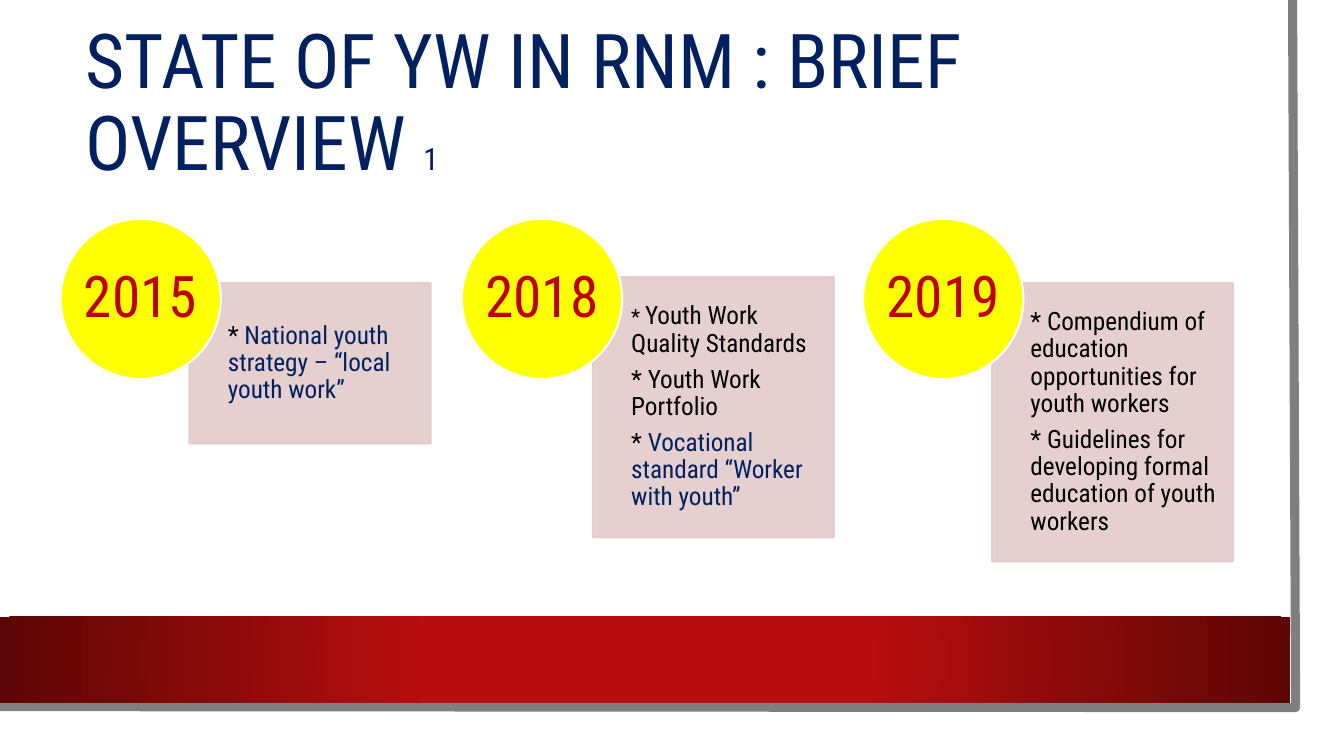
from dataclasses import dataclass

from lxml import etree
from pptx import Presentation
from pptx.dml.color import RGBColor
from pptx.enum.shapes import MSO_SHAPE
from pptx.enum.text import MSO_ANCHOR, PP_ALIGN
from pptx.oxml.ns import qn
from pptx.util import Inches, Pt

RECTANGLE = MSO_SHAPE.RECTANGLE
OVAL = MSO_SHAPE.OVAL
MIDDLE = MSO_ANCHOR.MIDDLE
LEFT = PP_ALIGN.LEFT
CENTER = PP_ALIGN.CENTER


@dataclass(frozen=True)
class Theme:
    font: str = "Roboto Condensed"
    navy: str = "002060"
    black: str = "000000"
    year: str = "C00000"
    circle: str = "FFFF00"
    white: str = "FFFFFF"
    card: str = "E4CACA"
    frame: str = "7F7F7F"
    band: str = "B80E0F"
    band_edge: str = "5C0607"
    title_size: float = 54
    title_number_size: float = 22
    year_size: float = 41
    body_size: float = 18
    star_size: float = 15


THEME = Theme()

CIRCLE_LEFT, CIRCLE_TOP, CIRCLE_SIZE, CIRCLE_STEP = 0.6, 2.17, 1.59, 3.98
CARD_WIDTH = 2.39
CARD_INDENT = 0.38

STAR = ("* ", THEME.black, THEME.body_size)


def body(text, color=THEME.black):
    return text, color, THEME.body_size


# year, card left, card top, card height, card padding, paragraphs of runs
MILESTONES = [
    ("2015", 1.88, 2.81, 1.59, 0.14, [
        [STAR, body("National youth strategy – “local youth work”", THEME.navy)],
    ]),
    ("2018", 5.88, 2.75, 2.58, 0.12, [
        [("* ", THEME.black, THEME.star_size), body("Youth Work Quality Standards")],
        [body("* Youth Work Portfolio")],
        [STAR, body("Vocational standard “Worker with youth”", THEME.navy)],
    ]),
    ("2019", 9.84, 2.81, 2.76, 0.14, [
        [body("* Compendium of education opportunities for youth workers")],
        [body("* Guidelines for developing formal education of youth workers")],
    ]),
]


def write_text(shape, paragraphs, margins=(0, 0, 0, 0), align=LEFT, wrap=True,
               space_before=0):
    """Fill a shape with paragraphs, each a list of (text, colour, size) runs."""
    frame = shape.text_frame
    frame.word_wrap = wrap
    frame.vertical_anchor = MIDDLE
    (frame.margin_left, frame.margin_top,
     frame.margin_right, frame.margin_bottom) = map(Inches, margins)
    for index, runs in enumerate(paragraphs):
        paragraph = frame.add_paragraph() if index else frame.paragraphs[0]
        paragraph.alignment = align
        paragraph.line_spacing = 0.9
        paragraph.space_before = Pt(space_before if index else 0)
        for text, color, size in runs:
            run = paragraph.add_run()
            run.text = text
            run.font.name = THEME.font
            run.font.size = Pt(size)
            run.font.color.rgb = RGBColor.from_string(color)


def add_filled_shape(slide, kind, left, top, width, height, fill, line=None):
    shape = slide.shapes.add_shape(
        kind, Inches(left), Inches(top), Inches(width), Inches(height))
    shape.shadow.inherit = False
    shape.fill.solid()
    shape.fill.fore_color.rgb = RGBColor.from_string(fill)
    if line:
        shape.line.color.rgb = RGBColor.from_string(line)
        shape.line.width = Pt(1.5)
    else:
        shape.line.fill.background()
    return shape


def set_opacity(shape, percent):
    """Make both the fill and the outline of a shape partly transparent."""
    for color in shape._element.spPr.iter(qn("a:srgbClr")):
        etree.SubElement(color, qn("a:alpha"), val=str(percent * 1000))


def set_radial_gradient(shape, stops):
    """Replace a solid fill by a gradient that spreads from the centre."""
    solid = shape._element.spPr.find(qn("a:solidFill"))
    gradient = etree.Element(qn("a:gradFill"), rotWithShape="1")
    stop_list = etree.SubElement(gradient, qn("a:gsLst"))
    for position, color in stops:
        stop = etree.SubElement(stop_list, qn("a:gs"), pos=str(position * 1000))
        etree.SubElement(stop, qn("a:srgbClr"), val=color)
    spread = etree.SubElement(gradient, qn("a:path"), path="circle")
    etree.SubElement(spread, qn("a:fillToRect"),
                     dict.fromkeys(("l", "t", "r", "b"), "50000"))
    solid.getparent().replace(solid, gradient)


def add_page_frame(slide):
    points = [(Inches(x), Inches(y))
              for x, y in [(12.82, 0), (12.85, 7.02), (-0.03, 7.01)]]
    builder = slide.shapes.build_freeform(*points[0])
    builder.add_line_segments(points[1:], close=False)
    outline = builder.convert_to_shape()
    outline.shadow.inherit = False
    outline.fill.background()
    outline.line.color.rgb = RGBColor.from_string(THEME.frame)
    outline.line.width = Pt(6.5)


def add_band(slide):
    band = add_filled_shape(slide, RECTANGLE, 0, 6.12, 12.8, 0.85, THEME.band)
    set_radial_gradient(
        band, [(0, THEME.band), (34, THEME.band), (100, THEME.band_edge)])


def add_title(slide):
    title = slide.shapes.add_textbox(
        Inches(0.75), Inches(0.41), Inches(11.62), Inches(1.26))
    runs = [("STATE OF YW IN RNM : BRIEF OVERVIEW ", THEME.navy, THEME.title_size),
            ("1", THEME.navy, THEME.title_number_size)]
    write_text(title, [runs], margins=(0.1, 0.05, 0.1, 0.05))


def add_milestone(slide, index, year, left, top, height, padding, paragraphs):
    card = add_filled_shape(slide, RECTANGLE, left, top, CARD_WIDTH, height,
                            THEME.card, THEME.card)
    set_opacity(card, 90)
    write_text(card, paragraphs, margins=(CARD_INDENT, padding, padding, padding),
               space_before=6.3)
    circle = add_filled_shape(slide, OVAL, CIRCLE_LEFT + index * CIRCLE_STEP,
                              CIRCLE_TOP, CIRCLE_SIZE, CIRCLE_SIZE,
                              THEME.circle, THEME.white)
    write_text(circle, [[(year, THEME.year, THEME.year_size)]],
               align=CENTER, wrap=False)


def main():
    presentation = Presentation()
    presentation.slide_width = Inches(13.33)
    presentation.slide_height = Inches(7.5)
    slide = presentation.slides.add_slide(presentation.slide_layouts[6])
    add_page_frame(slide)
    add_band(slide)
    add_title(slide)
    for index, milestone in enumerate(MILESTONES):
        add_milestone(slide, index, *milestone)
    presentation.save("out.pptx")


if __name__ == "__main__":
    main()
